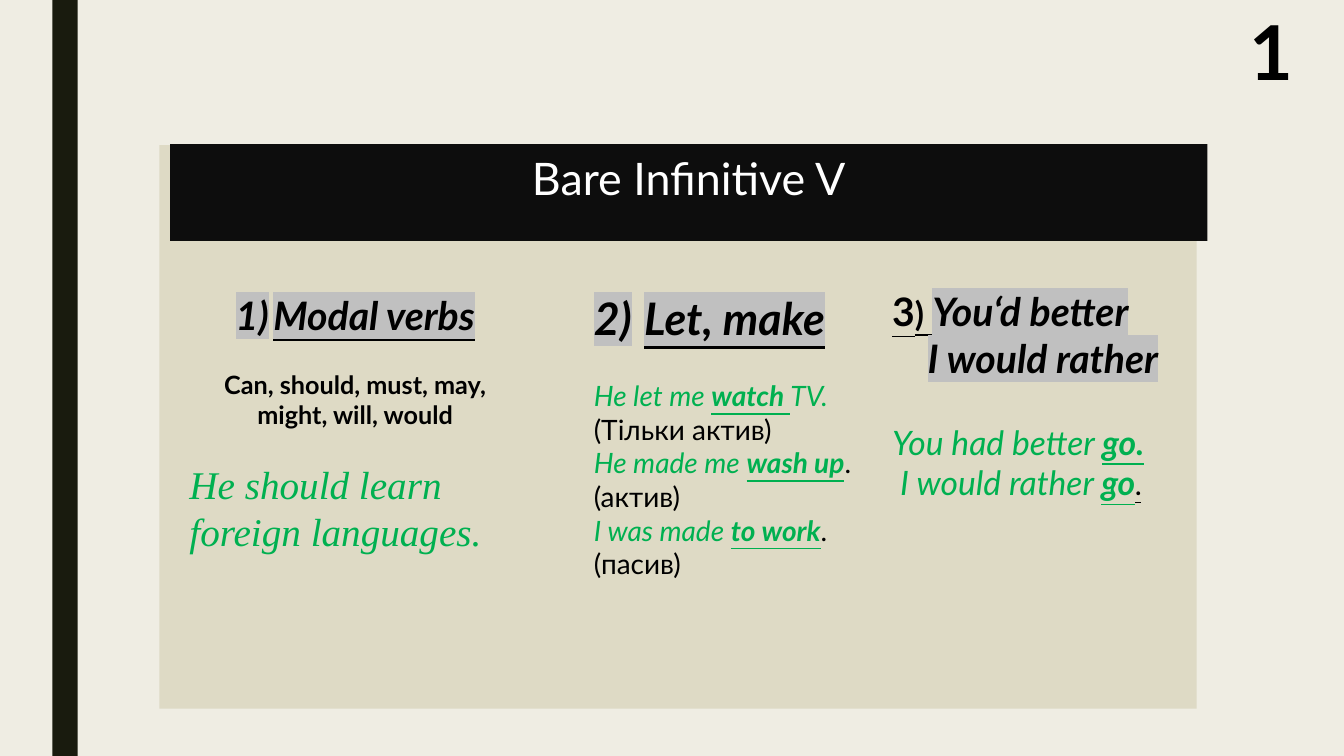
"""Build the grammar slide on the bare infinitive."""
from dataclasses import dataclass
from typing import Optional

from lxml.etree import SubElement
from pptx import Presentation
from pptx.dml.color import RGBColor
from pptx.enum.shapes import MSO_SHAPE as Preset
from pptx.enum.text import MSO_ANCHOR as Anchor, MSO_AUTO_SIZE as AutoSize, PP_ALIGN as Align
from pptx.oxml.ns import qn
from pptx.shapes.base import BaseShape
from pptx.slide import Slide
from pptx.text.text import Font, TextFrame
from pptx.util import Cm, Pt

BLACK = RGBColor(0x00, 0x00, 0x00)
WHITE = RGBColor(0xFF, 0xFF, 0xFF)
GREEN = RGBColor(0x00, 0xB0, 0x50)
SILVER = RGBColor(0xC0, 0xC0, 0xC0)
CREAM = RGBColor(0xEF, 0xED, 0xE3)
SAND = RGBColor(0xDE, 0xDA, 0xC5)
OLIVE = RGBColor(0x19, 0x1B, 0x0E)
INK = RGBColor(0x0D, 0x0D, 0x0D)


@dataclass(frozen=True)
class Box:
    left: float
    top: float
    width: float
    height: float


@dataclass(frozen=True)
class Block:
    box: Box
    color: RGBColor


@dataclass(frozen=True)
class Style:
    size: Optional[float] = None
    color: Optional[RGBColor] = None
    bold: Optional[bool] = None
    italic: Optional[bool] = None
    underline: Optional[bool] = None
    name: Optional[str] = None


@dataclass(frozen=True)
class Piece:
    text: str
    style: Style = Style()
    marked: bool = False


@dataclass(frozen=True)
class Line:
    pieces: tuple[Piece, ...]
    style: Style
    align: Align = Align.LEFT
    gap: float = 0
    margin: float = 0
    number: int = 0


@dataclass(frozen=True)
class Column:
    placeholder: int
    box: Box
    lines: tuple[Line, ...]


KEY = Style(bold=True, underline=True)
PLAIN = Style(color=BLACK, italic=False)


def heading(size: float) -> Style:
    return Style(size, BLACK, True, True, True, "Lato")


def example(size: float) -> Style:
    return Style(size, GREEN, False, True, False, "Lato")


def note(text: str) -> Line:
    return Line((Piece(text),), Style(20, BLACK, False, False, False, "Lato"))


BLOCKS = (
    Block(Box(1.32, 0, 0.64, 19.05), OLIVE),
    Block(Box(4.02, 3.66, 26.14, 14.2), SAND),
    Block(Box(4.29, 3.63, 26.14, 2.44), INK),
)
PAGE_NUMBER = Line((Piece("1"),), Style(54, BLACK, True, name="Lato"), Align.CENTER)
TITLE = Line((Piece("Bare Infinitive V"),), Style(32, WHITE, name="Lato"), Align.CENTER)
RATHER = Style(28, BLACK, True, True, False, "Lato")

COLUMNS = (
    Column(1, Box(4.52, 7.21, 8.86, 8.46), (
        Line((Piece("Modal verbs", marked=True),), heading(28), Align.CENTER, margin=0.95, number=1),
        Line((Piece("Can, should, must, may, might, will, would"),),
             Style(18, BLACK, True, False, False, "Lato"), Align.CENTER, gap=22),
        Line((Piece("He should learn foreign languages."),),
             Style(28, GREEN, False, True, False, "Times New Roman"), gap=22),
    )),
    Column(2, Box(14.71, 7.21, 7.21, 9.14), (
        Line((Piece("Let, make", marked=True),), heading(32), margin=1.27, number=2),
        Line((Piece("He let me "), Piece("watch ", KEY), Piece("TV.")), example(20), gap=24),
        note("(Тільки актив)"),
        Line((Piece("He made me "), Piece("wash up", KEY), Piece(".", PLAIN)), example(20)),
        note("(актив)"),
        Line((Piece("I was made "), Piece("to work", KEY), Piece(".", PLAIN)), example(20)),
        note("(пасив)"),
    )),
    Column(4, Box(22.23, 7.11, 7.92, 6.5), (
        Line((Piece("3", Style(italic=False, underline=True)),
              Piece(") ", Style(24, italic=False, underline=True)),
              Piece("You‘d better", marked=True)), RATHER),
        Line((Piece("I would rather", marked=True),), RATHER, margin=0.89),
        Line((Piece("You had better "), Piece("go.", KEY)), example(24), gap=29),
        Line((Piece(" I would rather "), Piece("go", KEY),
              Piece(".", Style(18, BLACK, True, False, True))), example(24)),
    )),
)
UNUSED_PLACEHOLDER = 3


def apply_style(font: Font, style: Style) -> None:
    if style.size is not None:
        font.size = Pt(style.size)
    if style.color is not None:
        font.color.rgb = style.color
    for trait in ("bold", "italic", "underline", "name"):
        value = getattr(style, trait)
        if value is not None:
            setattr(font, trait, value)


def write_lines(frame: TextFrame, lines: tuple[Line, ...]) -> None:
    frame.word_wrap = True
    frame.auto_size = AutoSize.NONE
    frame.vertical_anchor = Anchor.TOP
    for position, line in enumerate(lines):
        paragraph = frame.add_paragraph() if position else frame.paragraphs[0]
        paragraph.alignment = line.align
        paragraph.space_before = Pt(line.gap)
        properties = paragraph._p.get_or_add_pPr()
        properties.set("marL", str(Cm(line.margin)))
        properties.set("indent", str(-Cm(line.margin) if line.number else 0))
        if line.number:
            SubElement(properties, qn("a:buAutoNum"), type="arabicParenR", startAt=str(line.number))
        else:
            SubElement(properties, qn("a:buNone"))
        apply_style(paragraph.font, line.style)
        for piece in line.pieces:
            run = paragraph.add_run()
            run.text = piece.text
            apply_style(run.font, piece.style)
            if piece.marked:
                highlight = SubElement(run._r.get_or_add_rPr(), qn("a:highlight"))
                SubElement(highlight, qn("a:srgbClr"), val=str(SILVER))


def place(shape: BaseShape, box: Box) -> None:
    shape.left, shape.top = Cm(box.left), Cm(box.top)
    shape.width, shape.height = Cm(box.width), Cm(box.height)


def draw_block(slide: Slide, block: Block) -> None:
    box = block.box
    shape = slide.shapes.add_shape(
        Preset.RECTANGLE, Cm(box.left), Cm(box.top), Cm(box.width), Cm(box.height))
    shape.shadow.inherit = False
    shape.fill.solid()
    shape.fill.fore_color.rgb = block.color
    shape.line.fill.background()


def fill_placeholder(slide: Slide, index: int, box: Box, lines: tuple[Line, ...]) -> None:
    holder = next(item for item in slide.placeholders if item.placeholder_format.idx == index)
    place(holder, box)
    write_lines(holder.text_frame, lines)
    holder.element.getparent().append(holder.element)


def main() -> None:
    deck = Presentation()
    deck.slide_width, deck.slide_height = Cm(33.87), Cm(19.05)
    slide = deck.slides.add_slide(deck.slide_layouts.get_by_name("Comparison"))
    slide.background.fill.solid()
    slide.background.fill.fore_color.rgb = CREAM

    for block in BLOCKS:
        draw_block(slide, block)
    fill_placeholder(slide, 0, Box(4.29, 3.66, 26.14, 1.63), (TITLE,))
    for column in COLUMNS:
        fill_placeholder(slide, column.placeholder, column.box, column.lines)
    unused = slide.placeholders[UNUSED_PLACEHOLDER].element
    unused.getparent().remove(unused)

    page_number = slide.shapes.add_textbox(Cm(30.18), Cm(0), Cm(3.7), Cm(2.57))
    write_lines(page_number.text_frame, (PAGE_NUMBER,))
    deck.save("out.pptx")


if __name__ == "__main__":
    main()
